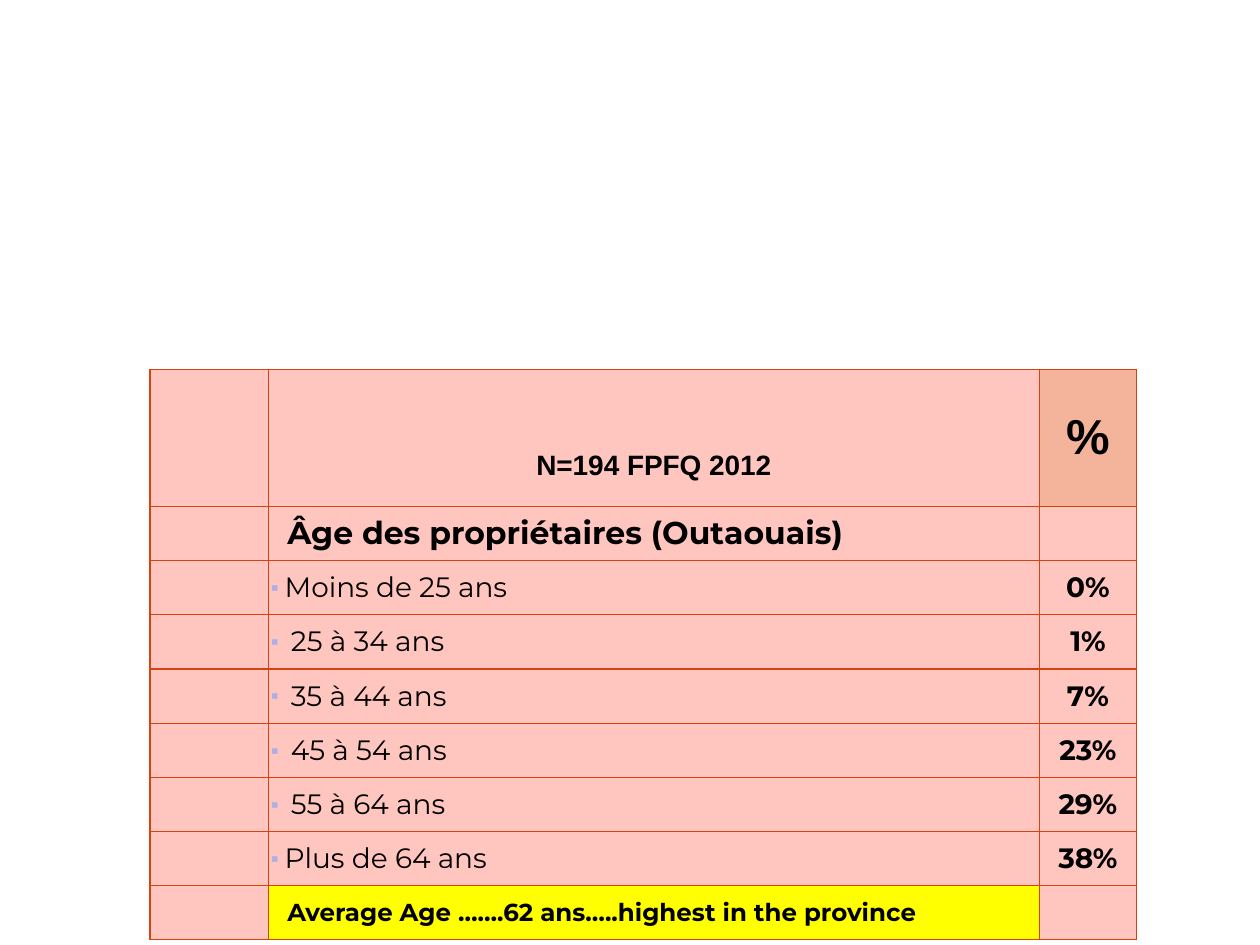
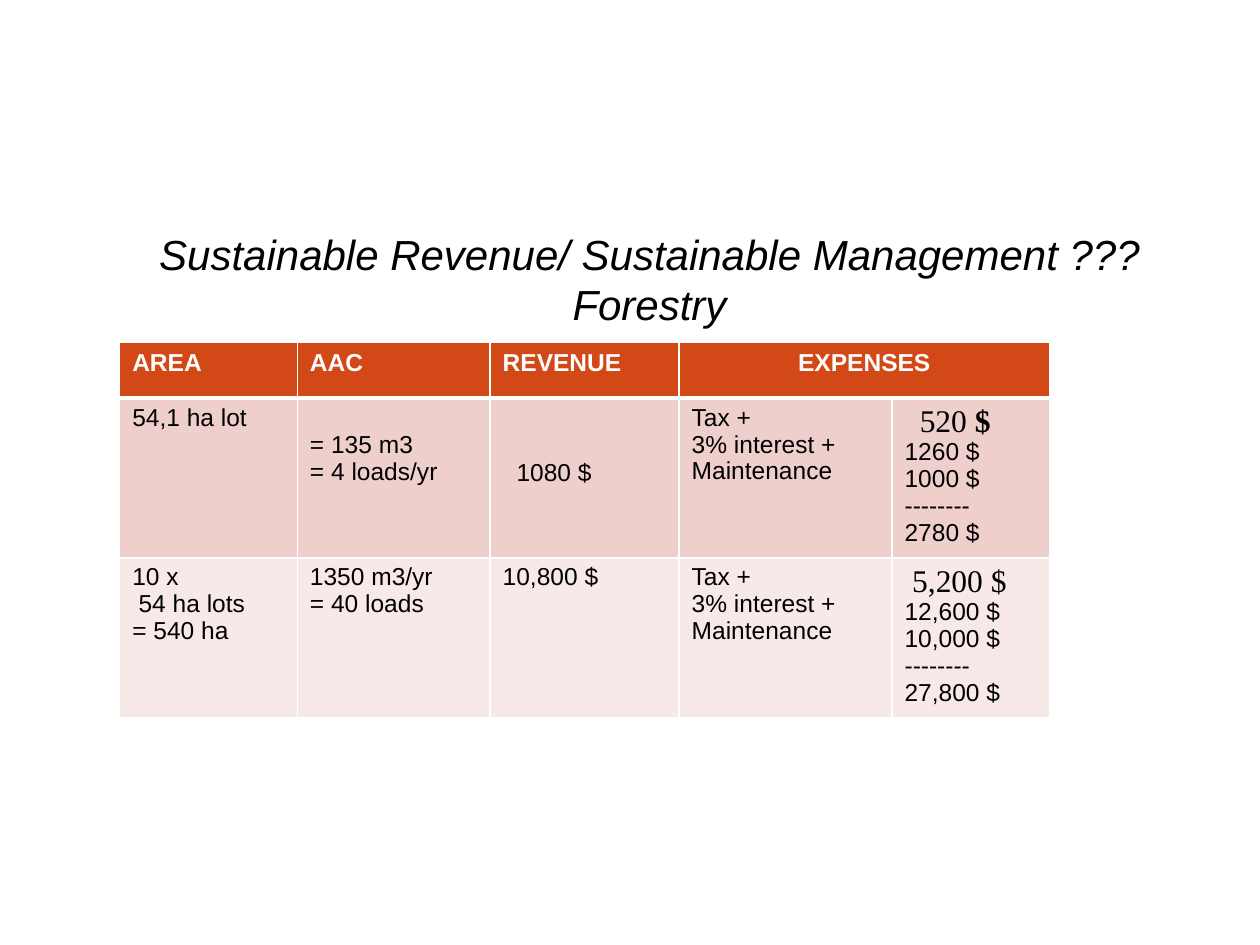
"""Build two slides with tables on woodlot owners' ages and on forestry revenue."""
import dataclasses

import lxml.etree
import pptx
import pptx.dml.color
import pptx.enum.text
import pptx.oxml.ns
import pptx.util

Inches = pptx.util.Inches
Pt = pptx.util.Pt
Align = pptx.enum.text.PP_ALIGN
Anchor = pptx.enum.text.MSO_ANCHOR


@dataclasses.dataclass(frozen=True)
class Theme:
    ink: str = "000000"
    white: str = "FFFFFF"
    pink: str = "FFC6BF"
    peach: str = "F4B39B"
    highlight: str = "FFFF00"
    rule: str = "D34412"
    header: str = "D34817"
    bands: tuple = ("EFCFCC", "F7E9E8")
    bullet: str = "AFAFE5"
    shadow: str = "808080"
    sans: str = "Arial"
    display: str = "Montserrat"
    serif: str = "Times New Roman"
    percent_size: int = 28
    title_size: int = 24
    large: int = 18
    medium: int = 16
    small: int = 14


def add_child(parent, tag, **attributes):
    child = lxml.etree.SubElement(parent, pptx.oxml.ns.qn(f"a:{tag}"))
    for name, value in attributes.items():
        child.set(name, str(value))
    return child


def write(para, text, *, size, font, color, bold=False, italic=False):
    span = para.add_run()
    span.text = text
    span.font.size = Pt(size)
    span.font.bold = bold
    span.font.italic = italic
    span.font.color.rgb = pptx.dml.color.RGBColor.from_string(color)
    span.font.name = font
    return span


class Page:
    def __init__(self, deck, theme, layout):
        self.theme = theme
        self.slide = deck.slides.add_slide(deck.slide_layouts[layout])

    def title(self, lines, left, top, width, height):
        box = self.slide.shapes.title
        box.left, box.top, box.width, box.height = map(Inches, (left, top, width, height))
        frame = box.text_frame
        frame.word_wrap = True
        frame.auto_size = pptx.enum.text.MSO_AUTO_SIZE.NONE
        frame.vertical_anchor = Anchor.MIDDLE
        para = frame.paragraphs[0]
        para.alignment = Align.CENTER
        for number, line in enumerate(lines):
            if number:
                para.add_line_break()
            span = write(para, line, size=self.theme.title_size, font=self.theme.sans,
                         color=self.theme.ink, italic=True)
            self.text_shadow(span)

    def text_shadow(self, span):
        fill = span.font._element.find(pptx.oxml.ns.qn("a:solidFill"))
        effects = add_child(fill.getparent(), "effectLst")
        shadow = add_child(effects, "outerShdw", blurRad=38100, dist=38100, dir=2700000)
        add_child(shadow, "srgbClr", val=self.theme.shadow)
        fill.addnext(effects)

    def table(self, left, top, columns, rows):
        frame = self.slide.shapes.add_table(
            len(rows), len(columns), Inches(left), Inches(top),
            Inches(sum(columns)), Inches(sum(rows)))
        table = frame.table
        table.first_row = table.horz_banding = False
        for column, width in zip(table.columns, columns):
            column.width = Inches(width)
        for row, height in zip(table.rows, rows):
            row.height = Inches(height)
        return table

    def cell(self, cell, fill, border, width, *, top=None, bottom=None):
        widths = {"lnL": width, "lnR": width, "lnT": top or width, "lnB": bottom or width}
        properties = cell._tc.get_or_add_tcPr()
        for side, points in widths.items():
            line = add_child(properties, side, w=int(Pt(points)))
            add_child(add_child(line, "solidFill"), "srgbClr", val=border)
        cell.fill.solid()
        cell.fill.fore_color.rgb = pptx.dml.color.RGBColor.from_string(fill)

    def margins(self, cell, left, top, right, bottom, anchor=Anchor.TOP):
        cell.margin_left, cell.margin_top = Inches(left), Inches(top)
        cell.margin_right, cell.margin_bottom = Inches(right), Inches(bottom)
        cell.vertical_anchor = anchor

    def indent(self, para, left, hanging=0):
        properties = para._p.get_or_add_pPr()
        properties.set("marL", str(Inches(left)))
        properties.set("indent", str(-Inches(hanging)))

    def bullet(self, para, left):
        self.indent(para, left, left)
        properties = para._p.get_or_add_pPr()
        add_child(add_child(properties, "buClr"), "srgbClr", val=self.theme.bullet)
        add_child(properties, "buSzPct", val=80000)
        add_child(properties, "buFont", typeface=self.theme.sans)
        add_child(properties, "buChar", char="▪")

    def text(self, cell, text, alignment=Align.LEFT, **style):
        para = cell.text_frame.paragraphs[0]
        para.alignment = alignment
        write(para, text, **{"color": self.theme.ink, **style})

    def lines(self, cell, lines, indents, **style):
        frame = cell.text_frame
        for number, line in enumerate(lines):
            para = frame.add_paragraph() if number else frame.paragraphs[0]
            para.line_spacing = 0.98
            if number in indents:
                self.indent(para, indents[number])
            write(para, line, **style)

    def amounts(self, cell, first, indent, others):
        theme = self.theme
        para = cell.text_frame.paragraphs[0]
        self.indent(para, indent)
        for text, bold in first:
            write(para, text, size=theme.large, font=theme.serif, color=theme.ink, bold=bold)
        for line in others:
            para = cell.text_frame.add_paragraph()
            para.line_spacing = 0.98
            write(para, line, size=theme.small, font=theme.sans, color=theme.ink)


def build_owner_ages(deck, theme):
    ages = [("Moins de 25 ans", "0%", 0.11), ("25 à 34 ans", "1%", 0.16),
            ("35 à 44 ans", "7%", 0.16), ("45 à 54 ans", "23%", 0.16),
            ("55 à 64 ans", "29%", 0.16), ("Plus de 64 ans", "38%", 0.11)]
    page = Page(deck, theme, 6)
    table = page.table(1.19, 2.93, [0.94, 6.12, 0.77], [1.09] + [0.43] * 8)
    last = len(table.rows) - 1
    special_fills = {(0, 2): theme.peach, (last, 1): theme.highlight}
    for row in range(last + 1):
        for column in range(3):
            cell = table.cell(row, column)
            page.cell(cell, special_fills.get((row, column), theme.pink), theme.rule, 0.75)
            page.margins(cell, 0.02, 0.02, 0.02, 0.02, Anchor.MIDDLE)

    sample = table.cell(0, 1)
    page.margins(sample, 0.02, 0.02, 0.02, 0.2, Anchor.BOTTOM)
    page.text(sample, "N=194 FPFQ 2012", Align.CENTER,
              size=theme.medium, font=theme.sans, bold=True)
    page.text(table.cell(0, 2), "%", Align.CENTER,
              size=theme.percent_size, font=theme.sans, bold=True)
    headings = [(1, "Âge des propriétaires (Outaouais)", theme.large),
                (last, "Average Age …….62 ans…..highest in the province", theme.small)]
    for row, heading, size in headings:
        page.margins(table.cell(row, 1), 0.15, 0.02, 0.02, 0.02, Anchor.MIDDLE)
        page.text(table.cell(row, 1), heading, size=size, font=theme.display, bold=True)
    for row, (age, share, indent) in enumerate(ages, start=2):
        label = table.cell(row, 1)
        page.bullet(label.text_frame.paragraphs[0], indent)
        page.text(label, age, size=theme.medium, font=theme.display)
        page.text(table.cell(row, 2), share, Align.CENTER,
                  size=theme.medium, font=theme.display, bold=True)


def build_forestry_revenue(deck, theme):
    expenses = ["Tax +", "3% interest +", "Maintenance"]
    lots = [
        [["54,1 ha lot"], ["= 135 m3", "= 4 loads/yr"], ["1080 $"], expenses],
        [["10 x", "54 ha lots", "= 540 ha"], ["1350 m3/yr", "= 40 loads"],
         ["10,800 $"], expenses],
    ]
    costs = [([("520", False), (" $", True)], 0.12, ["1260 $", "1000 $", "--------", "2780 $"]),
             ([("5,200 $", False)], 0.06, ["12,600 $", "10,000 $", "--------", "27,800 $"])]
    offsets = {(1, 1): (0.1, 0.27), (1, 2): (0.21, 0.49)}
    indents = {(2, 0): {1: 0.05}}

    page = Page(deck, theme, 5)
    page.title(["Sustainable Revenue/ Sustainable Management ???", "Forestry"],
               0.75, 1.82, 8.81, 0.78)
    table = page.table(0.95, 2.72, [1.41, 1.53, 1.5, 1.69, 1.25], [0.44, 1.27, 1.27])
    for row, fill in enumerate((theme.header, *theme.bands)):
        for column in range(5):
            cell = table.cell(row, column)
            page.cell(cell, fill, theme.white, 1,
                      top=3 if row == 1 else 1, bottom=3 if row == 0 else 1)
            left, top = offsets.get((row, column), (0.1, 0.05))
            page.margins(cell, left, top, 0.1, 0.05)

    table.cell(0, 3).merge(table.cell(0, 4))
    for column, heading in enumerate(["AREA", "AAC", "REVENUE", "EXPENSES"]):
        page.text(table.cell(0, column), heading,
                  Align.CENTER if column == 3 else Align.LEFT,
                  size=theme.small, font=theme.sans, color=theme.white, bold=True)
    for row, (lot, cost) in enumerate(zip(lots, costs), start=1):
        for column, lines in enumerate(lot):
            page.lines(table.cell(row, column), lines, indents.get((row, column), {}),
                       size=theme.small, font=theme.sans, color=theme.ink)
        page.amounts(table.cell(row, 4), *cost)


def main():
    deck = pptx.Presentation()
    deck.slide_width, deck.slide_height = Inches(10), Inches(7.5)
    theme = Theme()
    build_owner_ages(deck, theme)
    build_forestry_revenue(deck, theme)
    deck.save("out.pptx")


if __name__ == "__main__":
    main()
